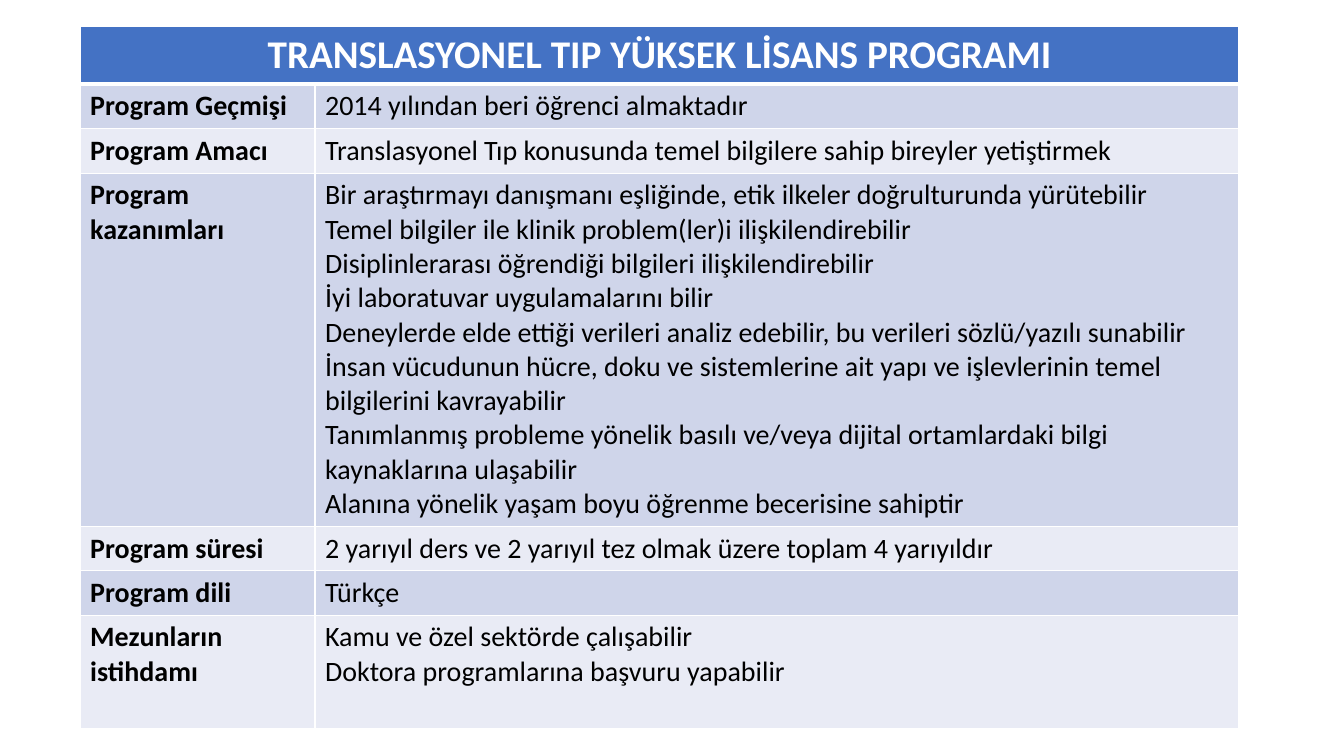
import pptx
import pptx.dml.color
import pptx.enum.text
import pptx.oxml.ns
import pptx.util
from lxml import etree

Cm = pptx.util.Cm
Pt = pptx.util.Pt

FONT = "Calibri"
WHITE, BLACK, BLUE = "FFFFFF", "000000", "4472C4"
BANDS = ["CFD5EA", "E9EBF5"]

TITLE = "TRANSLASYONEL TIP YÜKSEK LİSANS PROGRAMI"
TITLE_HEIGHT = 1.43
LINE_HEIGHT = 1.12
LABEL_WIDTH = 5.92

# Label, lines of detail, row height in cm
PROGRAM_ROWS = [
    ("Program Geçmişi", ["2014 yılından beri öğrenci almaktadır"], LINE_HEIGHT),
    ("Program Amacı",
     ["Translasyonel Tıp konusunda temel bilgilere sahip bireyler yetiştirmek"],
     LINE_HEIGHT),
    ("Program kazanımları", [
        "Bir araştırmayı danışmanı eşliğinde, etik ilkeler doğrulturunda yürütebilir",
        "Temel bilgiler ile klinik problem(ler)i ilişkilendirebilir",
        "Disiplinlerarası öğrendiği bilgileri ilişkilendirebilir",
        "İyi laboratuvar uygulamalarını bilir",
        "Deneylerde elde ettiği verileri analiz edebilir, bu verileri sözlü/yazılı sunabilir",
        "İnsan vücudunun hücre, doku ve sistemlerine ait yapı ve işlevlerinin temel "
        "bilgilerini kavrayabilir",
        "Tanımlanmış probleme yönelik basılı ve/veya dijital ortamlardaki bilgi "
        "kaynaklarına ulaşabilir",
        "Alanına yönelik yaşam boyu öğrenme becerisine sahiptir",
    ], 8.9),
    ("Program süresi",
     ["2 yarıyıl ders ve 2 yarıyıl tez olmak üzere toplam 4 yarıyıldır"],
     LINE_HEIGHT),
    ("Program dili", ["Türkçe"], LINE_HEIGHT),
    ("Mezunların istihdamı",
     ["Kamu ve özel sektörde çalışabilir", "Doktora programlarına başvuru yapabilir"],
     2.85),
]


def color(hex_string):
    return pptx.dml.color.RGBColor.from_string(hex_string)


def write_text(text_frame, lines, size=20, bold=False, font_color=BLACK,
               align=pptx.enum.text.PP_ALIGN.LEFT):
    for index, line in enumerate(lines):
        paragraph = text_frame.add_paragraph() if index else text_frame.paragraphs[0]
        paragraph.alignment = align
        run = paragraph.add_run()
        run.text = line
        run.font.name = FONT
        run.font.size = Pt(size)
        run.font.bold = bold
        run.font.color.rgb = color(font_color)


def add_borders(cell, top=1, bottom=1):
    """Draw white cell borders; widths are in points."""
    qualified = pptx.oxml.ns.qn
    properties = cell._tc.get_or_add_tcPr()
    for side, width in (("L", 1), ("R", 1), ("T", top), ("B", bottom)):
        line = etree.SubElement(properties, qualified(f"a:ln{side}"), w=str(Pt(width)))
        fill = etree.SubElement(line, qualified("a:solidFill"))
        etree.SubElement(fill, qualified("a:srgbClr"), val=WHITE)


def format_cell(cell, fill_color, lines=(), top=1, bottom=1, **text_format):
    add_borders(cell, top, bottom)
    cell.fill.solid()
    cell.fill.fore_color.rgb = color(fill_color)
    write_text(cell.text_frame, lines, **text_format)


def add_program_table(slide, left, top, width):
    heights = [TITLE_HEIGHT] + [height for _, _, height in PROGRAM_ROWS]
    frame = slide.shapes.add_table(len(heights), 2, Cm(left), Cm(top),
                                   Cm(width), Cm(sum(heights)))
    table = frame.table
    for column, column_width in zip(table.columns, (LABEL_WIDTH, width - LABEL_WIDTH)):
        column.width = Cm(column_width)
    for row, height in zip(table.rows, heights):
        row.height = Cm(height)

    table.cell(0, 0).merge(table.cell(0, 1))
    format_cell(table.cell(0, 0), BLUE, [TITLE], bottom=3, size=28, bold=True,
                font_color=WHITE, align=pptx.enum.text.PP_ALIGN.CENTER)
    format_cell(table.cell(0, 1), BLUE, bottom=3)
    for index, (label, details, _) in enumerate(PROGRAM_ROWS, start=1):
        band = BANDS[(index - 1) % 2]
        top_border = 3 if index == 1 else 1
        format_cell(table.cell(index, 0), band, [label], top=top_border, bold=True)
        format_cell(table.cell(index, 1), band, details, top=top_border)


def main():
    presentation = pptx.Presentation()
    presentation.slide_width = Cm(33.87)
    presentation.slide_height = Cm(19.05)
    slide = presentation.slides.add_slide(presentation.slide_layouts[6])
    add_program_table(slide, left=2.02, top=0.66, width=29.2)
    presentation.save("out.pptx")


if __name__ == "__main__":
    main()
